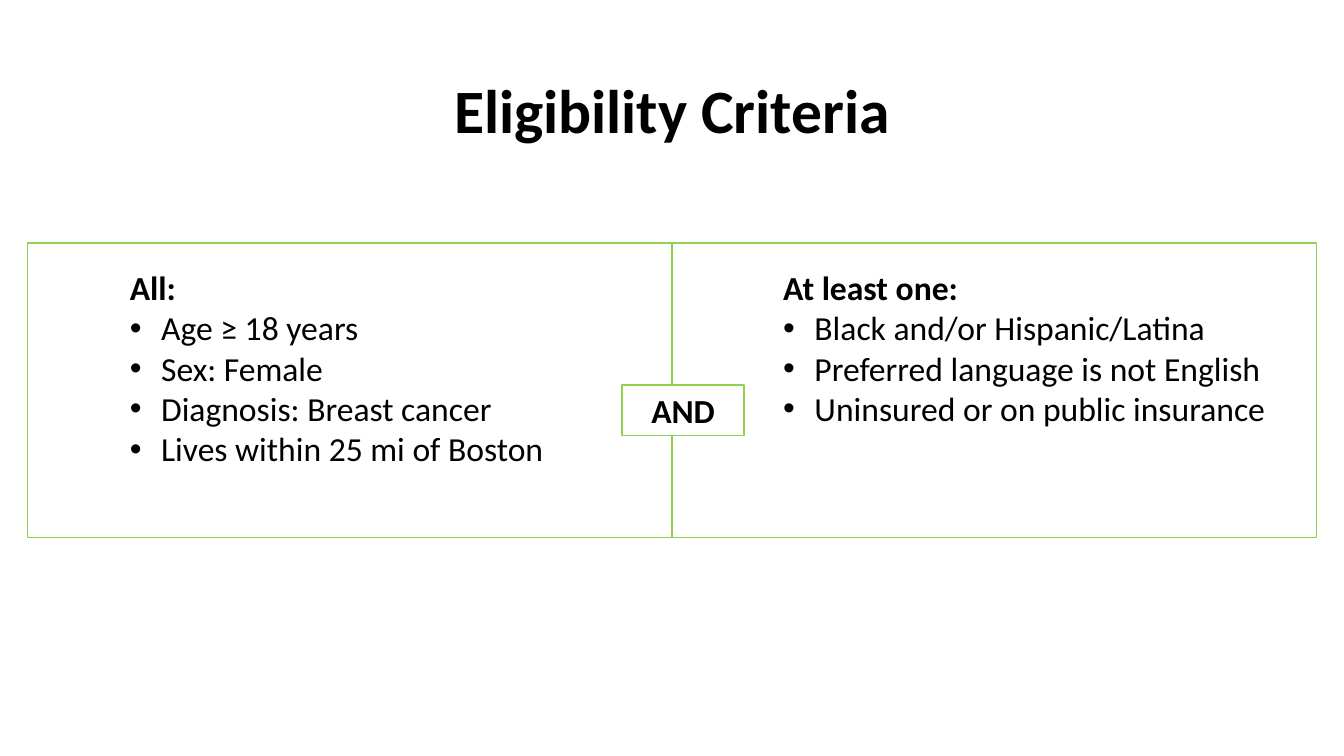
from dataclasses import dataclass

from lxml.etree import SubElement
from pptx import Presentation
from pptx.dml.color import RGBColor
from pptx.enum.shapes import MSO_CONNECTOR, MSO_SHAPE
from pptx.enum.text import MSO_ANCHOR, PP_ALIGN
from pptx.oxml.ns import qn
from pptx.util import Inches, Pt


@dataclass(frozen=True)
class Theme:
    font: str = "Calibri"
    ink: RGBColor = RGBColor(0, 0, 0)
    paper: RGBColor = RGBColor(0xFF, 0xFF, 0xFF)
    accent: RGBColor = RGBColor(0x92, 0xD0, 0x50)
    title_size: int = 44
    body_size: int = 24
    line_width: int = 1
    bullet_indent: float = 0.31


class SlideBuilder:
    def __init__(self, page, theme):
        self.page = page
        self.theme = theme

    def add_span(self, para, text, size, bold=False):
        span = para.add_run()
        span.text = text
        span.font.name = self.theme.font
        span.font.size = Pt(size)
        span.font.bold = bold
        span.font.color.rgb = self.theme.ink

    def style_line(self, line):
        line.color.rgb = self.theme.accent
        line.width = Pt(self.theme.line_width)

    def title(self, text, left, top, width, height):
        box = self.page.shapes.title
        box.left, box.top = Inches(left), Inches(top)
        box.width, box.height = Inches(width), Inches(height)
        box.text_frame.word_wrap = True
        box.text_frame.vertical_anchor = MSO_ANCHOR.MIDDLE
        para = box.text_frame.paragraphs[0]
        para.alignment = PP_ALIGN.CENTER
        para.line_spacing = 0.9
        self.add_span(para, text, self.theme.title_size, bold=True)

    def panel(self, left, top, width, height, label=None):
        box = self.page.shapes.add_shape(
            MSO_SHAPE.RECTANGLE, Inches(left), Inches(top), Inches(width), Inches(height))
        box.shadow.inherit = False
        box.fill.solid()
        box.fill.fore_color.rgb = self.theme.paper
        self.style_line(box.line)
        if label:
            box.text_frame.vertical_anchor = MSO_ANCHOR.TOP
            para = box.text_frame.paragraphs[0]
            para.alignment = PP_ALIGN.CENTER
            self.add_span(para, label, self.theme.body_size, bold=True)
        return box

    def divider(self, panel):
        """Split the panel down the middle."""
        middle = panel.left + panel.width // 2
        line = self.page.shapes.add_connector(
            MSO_CONNECTOR.STRAIGHT, middle, panel.top, middle, panel.top + panel.height)
        line.begin_connect(panel, 0)
        line.end_connect(panel, 2)
        self.style_line(line.line)
        SubElement(line._element.spPr, qn("a:effectLst"))

    def bullet(self, para):
        indent = Inches(self.theme.bullet_indent)
        properties = para._p.get_or_add_pPr()
        properties.set("marL", str(indent))
        properties.set("indent", str(-indent))
        SubElement(properties, qn("a:buFont"), typeface="Arial")
        SubElement(properties, qn("a:buChar"), char="•")

    def criteria(self, heading, items, left, top, width, height):
        box = self.page.shapes.add_textbox(
            Inches(left), Inches(top), Inches(width), Inches(height))
        frame = box.text_frame
        frame.word_wrap = True
        self.add_span(frame.paragraphs[0], heading, self.theme.body_size, bold=True)
        for item in items:
            para = frame.add_paragraph()
            self.bullet(para)
            self.add_span(para, item, self.theme.body_size)


def main():
    deck = Presentation()
    deck.slide_width, deck.slide_height = Inches(13.33), Inches(7.5)
    page = deck.slides.add_slide(deck.slide_layouts[5])
    builder = SlideBuilder(page, Theme())

    builder.title("Eligibility Criteria", 0.92, 0.4, 11.5, 1.45)
    panel = builder.panel(0.27, 2.41, 12.79, 2.92)
    builder.criteria(
        "At least one:",
        ["Black and/or Hispanic/Latina", "Preferred language is not English",
         "Uninsured or on public insurance"],
        7.67, 2.6, 5.1, 1.72)
    builder.criteria(
        "All:",
        ["Age ≥ 18 years", "Sex: Female", "Diagnosis: Breast cancer",
         "Lives within 25 mi of Boston"],
        1.19, 2.6, 4.56, 2.12)
    builder.divider(panel)
    builder.panel(6.17, 3.82, 1.21, 0.5, label="AND")

    deck.save("out.pptx")


if __name__ == "__main__":
    main()
